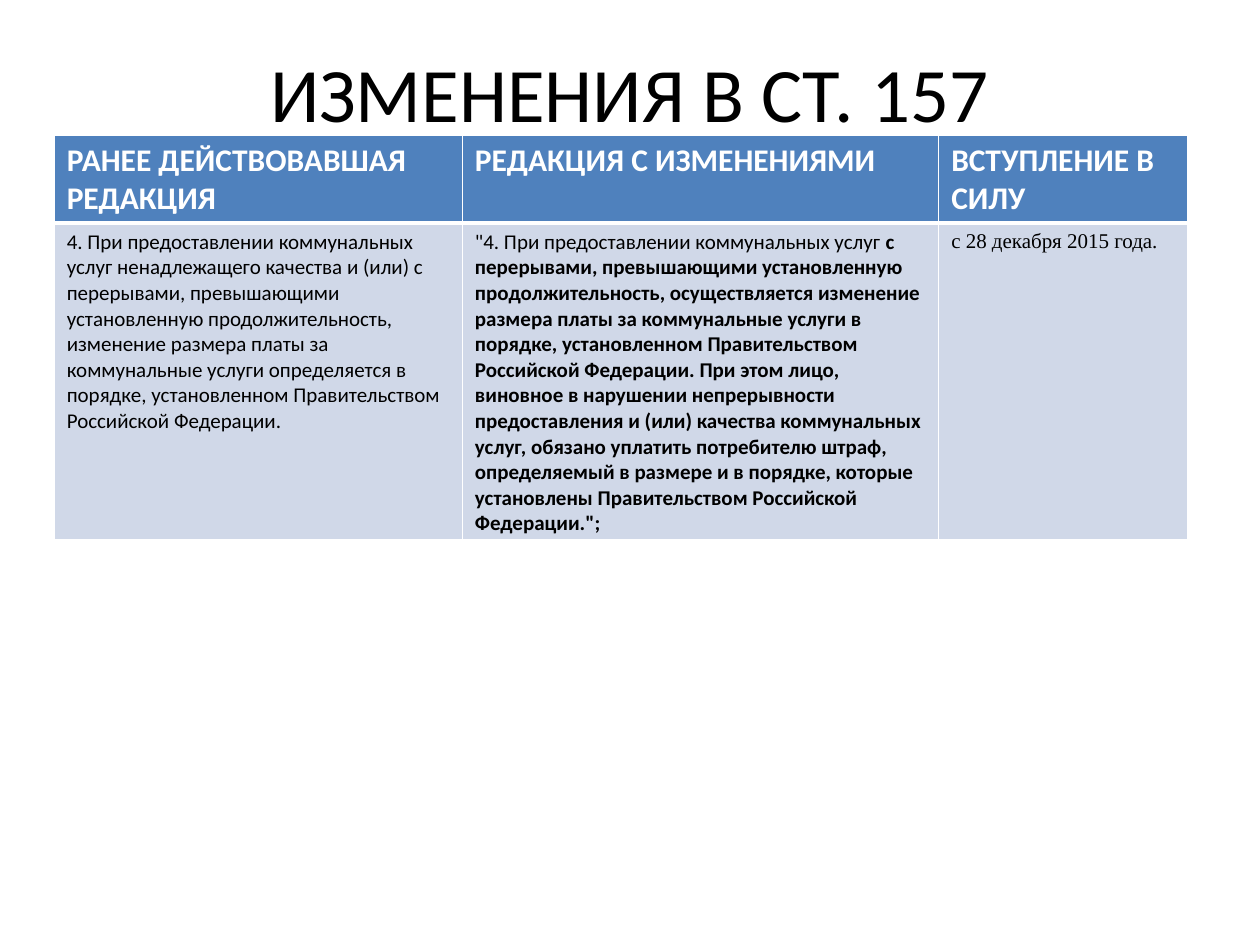
"""Build a slide that compares the old and new wording of article 157."""
from lxml.etree import SubElement
from pptx import Presentation
from pptx.dml.color import RGBColor
from pptx.enum.text import MSO_ANCHOR, PP_ALIGN
from pptx.oxml.ns import qn
from pptx.util import Inches, Pt

COLORS = {"head": "4F81BD", "body": "D0D8E8", "white": "FFFFFF", "black": "000000"}
TITLE = "ИЗМЕНЕНИЯ В СТ. 157"
HEADS = ["РАНЕЕ ДЕЙСТВОВАВШАЯ РЕДАКЦИЯ", "РЕДАКЦИЯ С ИЗМЕНЕНИЯМИ", "ВСТУПЛЕНИЕ В СИЛУ"]
OLD = (
    "4. При предоставлении коммунальных услуг ненадлежащего качества и (или) "
    "с перерывами, превышающими установленную продолжительность, изменение "
    "размера платы за коммунальные услуги определяется в порядке, "
    "установленном Правительством Российской Федерации."
)
INTRO = '"4. При предоставлении коммунальных услуг '
NEW = (
    "с перерывами, превышающими установленную продолжительность, "
    "осуществляется изменение размера платы за коммунальные услуги в порядке, "
    "установленном Правительством Российской Федерации. При этом лицо, виновное "
    "в нарушении непрерывности предоставления и (или) качества коммунальных "
    "услуг, обязано уплатить потребителю штраф, определяемый в размере и в "
    "порядке, которые установлены Правительством Российской Федерации.\";"
)
DATE = "с 28 декабря 2015 года."
ROWS = [
    [[(text, {"size": 18, "bold": True, "color": "white"})] for text in HEADS],
    [
        [(OLD, {})],
        [(INTRO, {}), (NEW, {"bold": True})],
        [(DATE, {"font": "Times New Roman"})],
    ],
]
WIDTHS = [3.24, 3.78, 1.98]
HEIGHTS = [0.69, 2.51]


def write(para, text, size=12, bold=False, color="black", font="Calibri"):
    run = para.add_run()
    run.text = text
    run.font.size = Pt(size)
    run.font.bold = bold
    run.font.name = font
    run.font.color.rgb = RGBColor.from_string(COLORS[color])


def border(cell, sides):
    props = cell._tc.get_or_add_tcPr()
    for side, width in sides.items():
        line = SubElement(props, qn(f"a:ln{side}"), w=str(Pt(width)))
        fill = SubElement(line, qn("a:solidFill"))
        SubElement(fill, qn("a:srgbClr"), val=COLORS["white"])


def add_title(slide):
    box = slide.shapes.add_textbox(Inches(0.5), Inches(0.3), Inches(9), Inches(0.85))
    frame = box.text_frame
    frame.word_wrap = True
    frame.vertical_anchor = MSO_ANCHOR.MIDDLE
    para = frame.paragraphs[0]
    para.alignment = PP_ALIGN.CENTER
    write(para, TITLE, size=44)


def add_grid(slide):
    grid = slide.shapes.add_table(
        len(ROWS), len(WIDTHS), Inches(0.43), Inches(1.07),
        Inches(sum(WIDTHS)), Inches(sum(HEIGHTS)),
    ).table
    for col, width in zip(grid.columns, WIDTHS):
        col.width = Inches(width)
    for row, height in zip(grid.rows, HEIGHTS):
        row.height = Inches(height)
    for r, row in enumerate(ROWS):
        head = r == 0
        sides = {"L": 1, "R": 1, "T": 1 if head else 3, "B": 3 if head else 1}
        for c, runs in enumerate(row):
            cell = grid.cell(r, c)
            border(cell, sides)
            cell.fill.solid()
            cell.fill.fore_color.rgb = RGBColor.from_string(COLORS["head" if head else "body"])
            for text, style in runs:
                write(cell.text_frame.paragraphs[0], text, **style)


def main():
    deck = Presentation()
    deck.slide_width, deck.slide_height = Inches(10), Inches(7.5)
    slide = deck.slides.add_slide(deck.slide_layouts[6])
    add_title(slide)
    add_grid(slide)
    deck.save("out.pptx")


if __name__ == "__main__":
    main()
